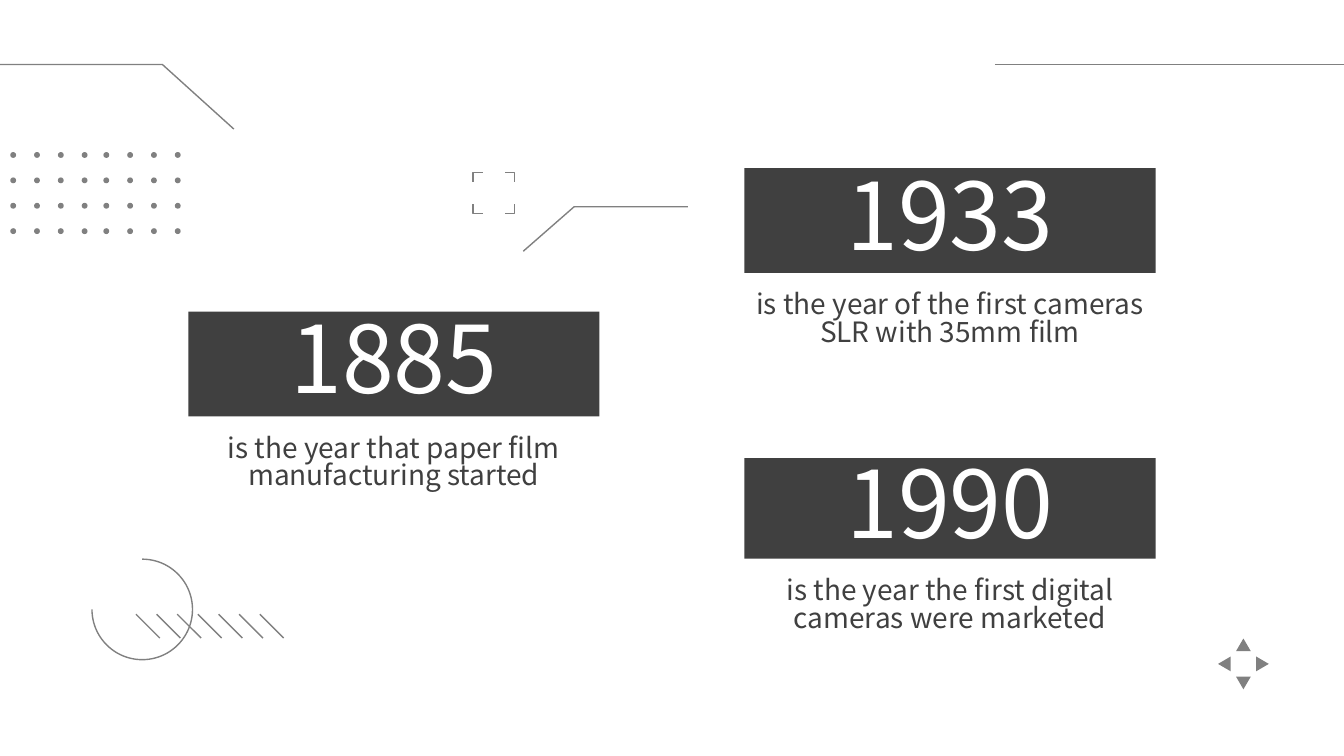
from lxml.etree import SubElement
from pptx import Presentation
from pptx.dml.color import RGBColor
from pptx.enum.shapes import MSO_CONNECTOR, MSO_SHAPE
from pptx.enum.text import MSO_ANCHOR, MSO_AUTO_SIZE, PP_ALIGN
from pptx.oxml.ns import qn
from pptx.util import Cm, Pt

FONT = "Noto Sans CJK KR"
DARK = RGBColor(0x40, 0x40, 0x40)
GREY = RGBColor(0x80, 0x80, 0x80)
WHITE = RGBColor(0xFF, 0xFF, 0xFF)

# Year, caption, left, top and height of the year bar (all lengths in cm)
MILESTONES = [
    ("1933", "is the year of the first cameras SLR with 35mm film", 14.07, 3.18, 1.98),
    ("1885", "is the year that paper film manufacturing started", 3.56, 5.89, 1.98),
    ("1990", "is the year the first digital cameras were marketed", 14.07, 8.66, 1.9),
]
BAR_WIDTH = 7.77
CAPTION_WIDTH, CAPTION_HEIGHT, CAPTION_GAP = 8.79, 1.37, 0.21

BENT_LINES = [
    [(0, 1.22), (3.07, 1.22), (4.42, 2.44)],
    [(9.89, 4.75), (10.85, 3.91), (13, 3.91)],
]
DOT_BLOCKS, DOT_TOP, DOT_SIZE = (0.25, 2.01), 2.93, 0.11
DOT_STEP_X, DOT_STEP_Y = 0.45, 0.48
HATCH_LEFT, HATCH_TOP, HATCH_SIZE, HATCH_STEP = 2.57, 11.61, 0.45, 0.39
FRAME_CENTER, FRAME_HALF, FRAME_ARM = (9.33, 3.65), 0.39, 0.18
ARROWS_CENTER, ARROW_TIP, ARROW_BASE, ARROW_HALF = (23.5, 12.55), 0.48, 0.24, 0.14


def style(shape, fill=None, line=None):
    shape.shadow.inherit = False
    if fill is None:
        shape.fill.background()
    else:
        shape.fill.solid()
        shape.fill.fore_color.rgb = fill
    if line is None:
        shape.line.fill.background()
    else:
        shape.line.color.rgb = line
        shape.line.width = Pt(0.75)


def add_path(shapes, points, close=False):
    """Draw a filled polygon when closed, otherwise an open thin line."""
    corners = [(Cm(x), Cm(y)) for x, y in points]
    builder = shapes.build_freeform(*corners[0])
    builder.add_line_segments(corners[1:], close=close)
    style(builder.convert_to_shape(), GREY if close else None, None if close else GREY)


def add_line(shapes, x1, y1, x2, y2):
    line = shapes.add_connector(MSO_CONNECTOR.STRAIGHT, Cm(x1), Cm(y1), Cm(x2), Cm(y2))
    line.line.color.rgb = GREY
    line.line.width = Pt(0.75)
    SubElement(line._element.spPr, qn("a:effectLst"))


def add_decoration(shapes):
    for block in DOT_BLOCKS:
        for column in range(4):
            for row in range(4):
                dot = shapes.add_shape(
                    MSO_SHAPE.OVAL,
                    Cm(block + column * DOT_STEP_X - DOT_SIZE / 2),
                    Cm(DOT_TOP + row * DOT_STEP_Y - DOT_SIZE / 2),
                    Cm(DOT_SIZE), Cm(DOT_SIZE))
                style(dot, GREY)

    x, y = ARROWS_CENTER
    for dx, dy in [(-1, 0), (1, 0), (0, 1), (0, -1)]:
        base_x, base_y = x + dx * ARROW_BASE, y + dy * ARROW_BASE
        add_path(shapes, [
            (x + dx * ARROW_TIP, y + dy * ARROW_TIP),
            (base_x + dy * ARROW_HALF, base_y + dx * ARROW_HALF),
            (base_x - dy * ARROW_HALF, base_y - dx * ARROW_HALF),
        ], close=True)

    x, y = FRAME_CENTER
    for dx, dy in [(-1, -1), (1, -1), (1, 1), (-1, 1)]:
        corner_x, corner_y = x + dx * FRAME_HALF, y + dy * FRAME_HALF
        add_path(shapes, [
            (corner_x, corner_y - dy * FRAME_ARM),
            (corner_x, corner_y),
            (corner_x - dx * FRAME_ARM, corner_y),
        ])

    for points in BENT_LINES:
        add_path(shapes, points)
    add_line(shapes, 18.8, 1.22, 25.4, 1.22)

    arc = shapes.add_shape(MSO_SHAPE.ARC, Cm(1.74), Cm(10.57), Cm(1.9), Cm(1.9))
    arc.adjustments[0] = 162  # from the top, in units of 5/3 degrees
    arc.adjustments[1] = 108  # clockwise to the left
    style(arc, line=GREY)

    for index in range(7):
        left = HATCH_LEFT + index * HATCH_STEP
        add_line(shapes, left, HATCH_TOP, left + HATCH_SIZE, HATCH_TOP + HATCH_SIZE)


def write(box, text, size, color, spacing, bottom):
    frame = box.text_frame
    frame.text = text
    frame.word_wrap = True
    frame.auto_size = MSO_AUTO_SIZE.NONE
    frame.vertical_anchor = MSO_ANCHOR.MIDDLE
    frame.margin_left = frame.margin_right = frame.margin_top = Cm(0.25)
    frame.margin_bottom = Cm(bottom)
    para = frame.paragraphs[0]
    para.alignment = PP_ALIGN.CENTER
    para.line_spacing = spacing
    span = para.runs[0]
    span.font.name = FONT
    span.font.size = Pt(size)
    span.font.color.rgb = color


def add_milestones(shapes):
    for index, (year, caption, left, top, height) in enumerate(MILESTONES):
        place = Cm(left), Cm(top), Cm(BAR_WIDTH), Cm(height)
        if index == 0:
            bar = shapes.title
            bar.left, bar.top, bar.width, bar.height = place
            bar.fill.solid()
            bar.fill.fore_color.rgb = DARK
        else:
            bar = shapes.add_shape(MSO_SHAPE.RECTANGLE, *place)
            style(bar, DARK)
        write(bar, year, 50, WHITE, 0.95, 0.33)

        box = shapes.add_textbox(
            Cm(left - (CAPTION_WIDTH - BAR_WIDTH) / 2), Cm(top + height + CAPTION_GAP),
            Cm(CAPTION_WIDTH), Cm(CAPTION_HEIGHT))
        write(box, caption, 15, DARK, 0.82, 0.25)


def main():
    deck = Presentation()
    deck.slide_width, deck.slide_height = Cm(25.4), Cm(14.29)
    slide = deck.slides.add_slide(deck.slide_layouts[5])
    add_decoration(slide.shapes)
    add_milestones(slide.shapes)
    deck.save("out.pptx")


if __name__ == "__main__":
    main()
